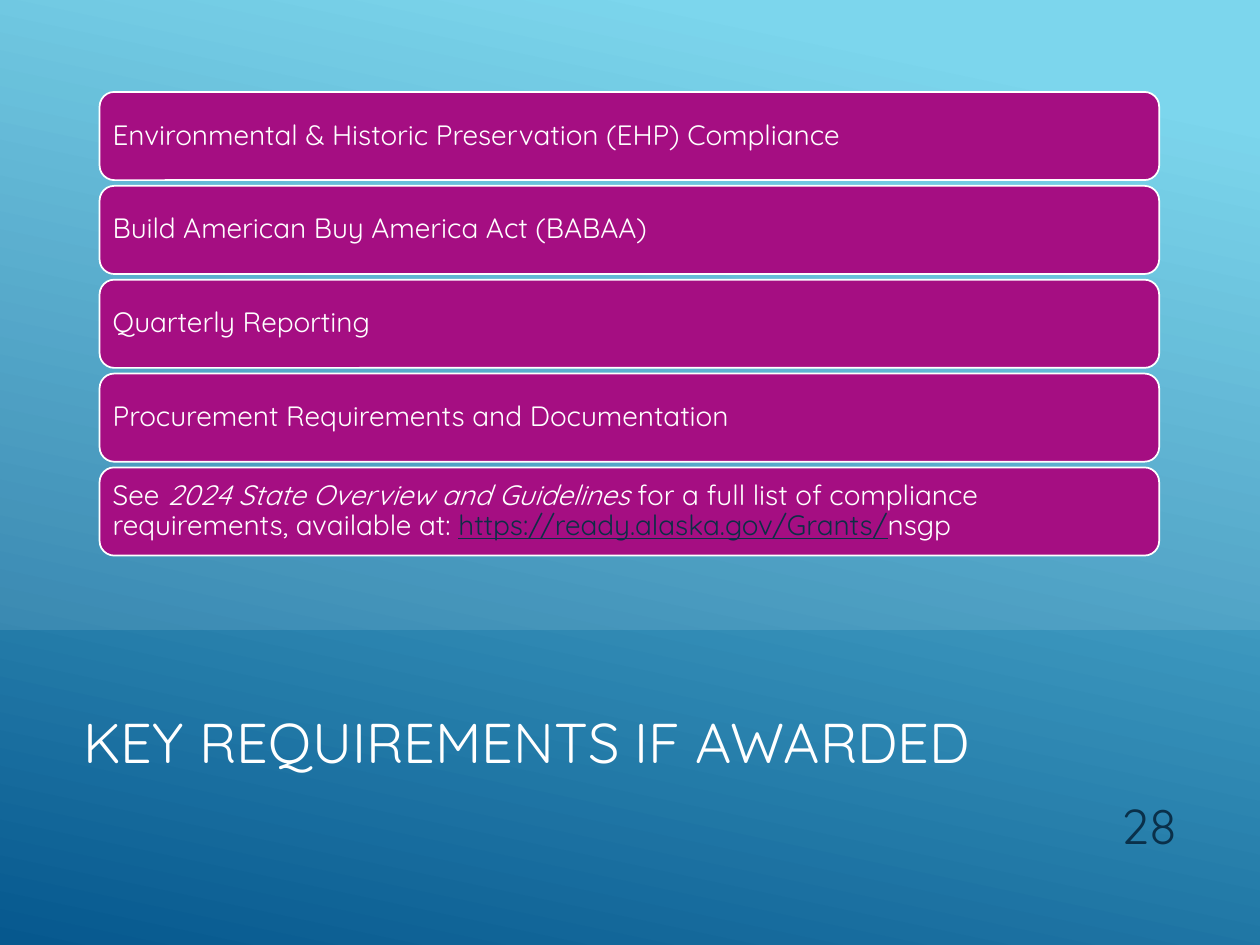
from dataclasses import dataclass

from lxml.etree import SubElement
from pptx import Presentation
from pptx.dml.color import RGBColor
from pptx.enum.shapes import MSO_SHAPE
from pptx.enum.text import MSO_ANCHOR, MSO_AUTO_SIZE, PP_ALIGN
from pptx.oxml.ns import qn
from pptx.shapes.autoshape import Shape
from pptx.slide import Slide
from pptx.text.text import TextFrame, _Paragraph
from pptx.util import Inches, Pt

WHITE = RGBColor(0xFF, 0xFF, 0xFF)
SKY = RGBColor(0x6E, 0xD2, 0xEB)
DEEP_BLUE = RGBColor(0x06, 0x58, 0x8E)
MAGENTA = RGBColor(0xA5, 0x0E, 0x82)
NAVY = RGBColor(0x0A, 0x30, 0x4A)
LINK_BLUE = RGBColor(0x0D, 0x2E, 0x46)

FONT = "Quicksand"
COLUMNS, ROWS = 1000, 750
CELL = Inches(0.01)


@dataclass(frozen=True)
class Area:
    column: float
    row: float
    columns: float
    rows: float

    def lengths(self) -> tuple[int, ...]:
        return tuple(round(cells * CELL) for cells in
                     (self.column, self.row, self.columns, self.rows))


@dataclass(frozen=True)
class Span:
    text: str
    italic: bool = False
    link: bool = False


REQUIREMENTS = [
    [Span("Environmental & Historic Preservation (EHP) Compliance")],
    [Span("Build American Buy America Act (BABAA)")],
    [Span("Quarterly Reporting")],
    [Span("Procurement Requirements and Documentation")],
    [
        Span("See "),
        Span("2024 State Overview and Guidelines ", italic=True),
        Span("for a full list of compliance requirements, available at: "),
        Span("https://ready.alaska.gov/Grants/", link=True),
        Span("nsgp"),
    ],
]
FIRST_BAR = Area(79, 73, 841, 70)
BAR_STEP = 74.5


def add_panel(page: Slide, kind: MSO_SHAPE, area: Area) -> Shape:
    panel = page.shapes.add_shape(kind, *area.lengths())
    panel.shadow.inherit = False
    panel.line.fill.background()
    return panel


def style(para: _Paragraph, size: int, color: RGBColor, align: PP_ALIGN) -> None:
    para.alignment = align
    para.font.name = FONT
    para.font.size = Pt(size)
    para.font.color.rgb = color


def set_frame(frame: TextFrame, anchor: MSO_ANCHOR) -> None:
    frame.word_wrap = True
    frame.auto_size = MSO_AUTO_SIZE.NONE
    frame.vertical_anchor = anchor


def draw_backdrop(page: Slide) -> None:
    backdrop = add_panel(page, MSO_SHAPE.RECTANGLE, Area(0, 0, COLUMNS, ROWS))
    backdrop.fill.gradient()
    backdrop.fill.gradient_angle = 258
    stops = zip(backdrop.fill.gradient_stops, ((0.1, SKY), (1, DEEP_BLUE)))
    for stop, (position, color) in stops:
        stop.position = position
        stop.color.rgb = color
    page.shapes._spTree.insert(2, backdrop._element)


def draw_veil(page: Slide) -> None:
    veil = add_panel(page, MSO_SHAPE.RECTANGLE, Area(0, 0, COLUMNS, ROWS * 2 / 3))
    veil.fill.solid()
    veil.fill.fore_color.rgb = WHITE
    color = veil._element.spPr.find(qn("a:solidFill")).find(qn("a:srgbClr"))
    SubElement(color, qn("a:alpha"), val="10000")


def draw_title(page: Slide, text: str, area: Area) -> None:
    title = page.shapes.title
    title.left, title.top, title.width, title.height = area.lengths()
    title.text = text
    set_frame(title.text_frame, MSO_ANCHOR.MIDDLE)
    style(title.text_frame.paragraphs[0], 32, WHITE, PP_ALIGN.LEFT)


def draw_page_number(page: Slide, text: str, area: Area) -> None:
    box = page.shapes.add_textbox(*area.lengths())
    set_frame(box.text_frame, MSO_ANCHOR.BOTTOM)
    para = box.text_frame.paragraphs[0]
    para.text = text
    para.space_after = Pt(6)
    style(para, 28, NAVY, PP_ALIGN.RIGHT)


def draw_bar(page: Slide, spans: list[Span], area: Area) -> None:
    bar = add_panel(page, MSO_SHAPE.ROUNDED_RECTANGLE, area)
    bar.fill.solid()
    bar.fill.fore_color.rgb = MAGENTA
    bar.line.color.rgb = WHITE
    bar.line.width = Pt(1)
    frame = bar.text_frame
    set_frame(frame, MSO_ANCHOR.MIDDLE)
    frame.margin_left = frame.margin_right = Inches(0.07)
    frame.margin_top = frame.margin_bottom = Inches(0.07)
    para = frame.paragraphs[0]
    para.line_spacing = 0.9
    style(para, 16, WHITE, PP_ALIGN.LEFT)
    for span in spans:
        run = para.add_run()
        run.text = span.text
        if span.italic:
            run.font.italic = True
        if span.link:
            run.font.underline = True
            run.font.color.rgb = LINK_BLUE


def main() -> None:
    deck = Presentation()
    deck.slide_width, deck.slide_height = COLUMNS * CELL, ROWS * CELL
    page = deck.slides.add_slide(deck.slide_layouts.get_by_name("Title Only"))
    draw_backdrop(page)
    draw_title(page, "KEY REQUIREMENTS IF AWARDED", Area(56, 525, 760, 126))
    draw_veil(page)
    draw_page_number(page, "28", Area(850, 610, 94, 73))
    for index, spans in enumerate(REQUIREMENTS):
        row = FIRST_BAR.row + index * BAR_STEP
        draw_bar(page, spans, Area(FIRST_BAR.column, row, FIRST_BAR.columns, FIRST_BAR.rows))
    deck.save("out.pptx")


if __name__ == "__main__":
    main()
